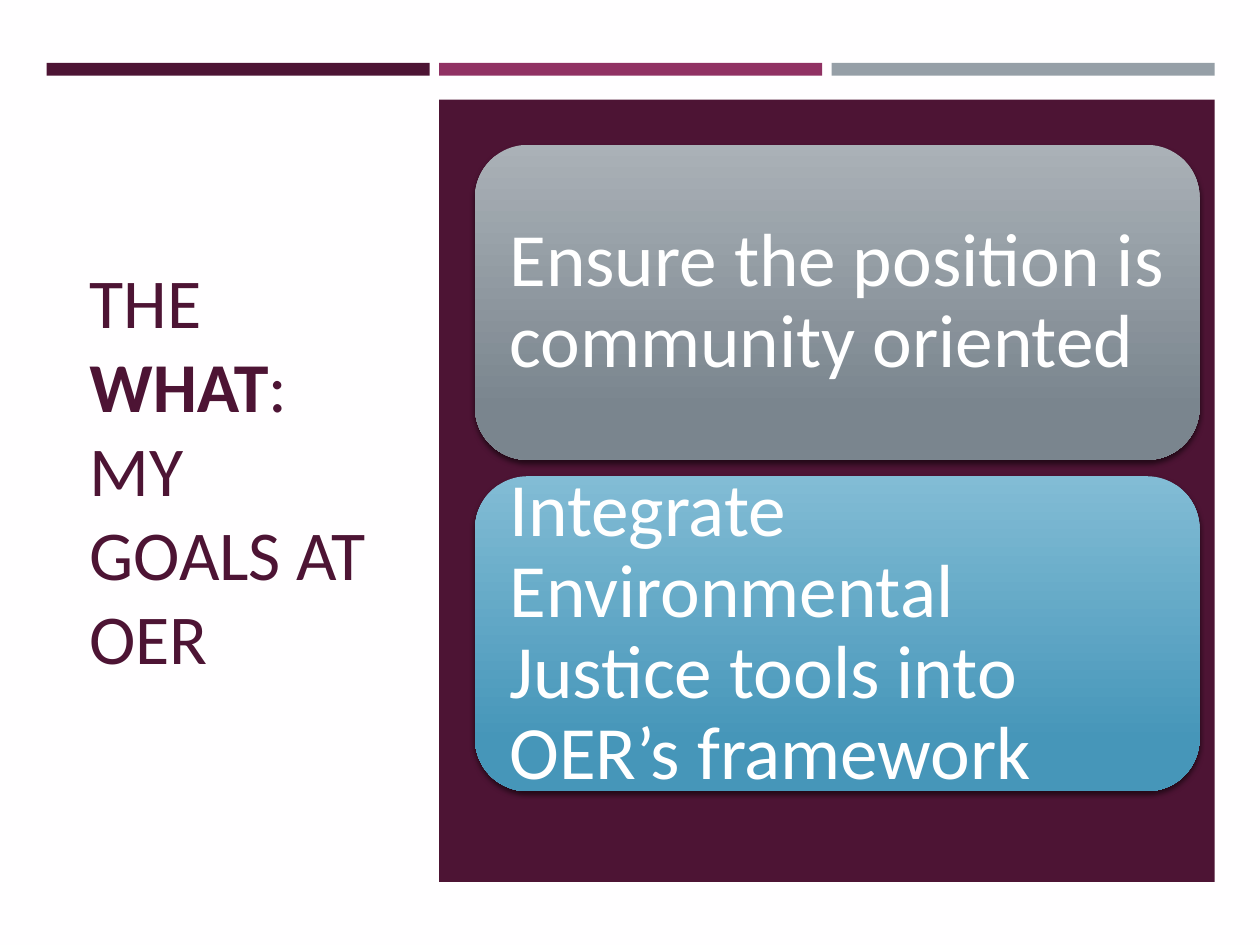
import pptx
import pptx.util
import pptx.dml.color
import pptx.enum.shapes
import pptx.enum.text
import pptx.oxml
import pptx.oxml.ns

Inch = pptx.util.Inches
Kind = pptx.enum.shapes.MSO_SHAPE
Mid = pptx.enum.text.MSO_ANCHOR.MIDDLE
Left = pptx.enum.text.PP_ALIGN.LEFT
PLUM, ROSE, GREY, WHITE = "4D1434", "903163", "969FA7", "FFFFFF"


def paint(color, code):
    """Set a python-pptx color format from a hex string."""
    color.rgb = pptx.dml.color.RGBColor.from_string(code)


def block(kind, x, y, w, h, code):
    """Add a borderless shape with a solid fill and no shadow."""
    shape = slide.shapes.add_shape(kind, Inch(x), Inch(y), Inch(w), Inch(h))
    shape.fill.solid()
    paint(shape.fill.fore_color, code)
    shape.line.fill.background()
    shape.shadow.inherit = False
    return shape


deck = pptx.Presentation()
deck.slide_width, deck.slide_height = Inch(10), Inch(7.5)
slide = deck.slides.add_slide(deck.slide_layouts[5])
back = slide.background.fill
back.solid()
paint(back.fore_color, "FFFEFF")

# Title on the left
title = slide.shapes.title
title.left, title.top = Inch(0.61), Inch(1.14)
title.width, title.height = Inch(2.5), Inch(5.15)
frame = title.text_frame
frame.word_wrap = True
frame.auto_size = pptx.enum.text.MSO_AUTO_SIZE.NONE
frame.vertical_anchor = Mid
para = frame.paragraphs[0]
para.alignment = Left
for text in ("THE ", "WHAT", ": MY GOALS AT OER"):
    run = para.add_run()
    run.text = text
    run.font.name = "Calibri"
    run.font.size = pptx.util.Pt(40)
    run.font.bold = text == "WHAT"
    paint(run.font.color, PLUM)

# Three bars across the top, and the panel under the last two
edge, step, wide = 0.37, 3.115, 3.04
for col, code in enumerate((PLUM, ROSE, GREY)):
    block(Kind.RECTANGLE, edge + col * step, 0.5, wide, 0.1, code)
block(Kind.RECTANGLE, edge + step, 0.79, step + wide, 6.21, PLUM)

# Goal cards
goals = (
    ("Ensure the position is community oriented", "AAB1B7", "7A858E"),
    ("Integrate Environmental Justice tools into OER’s framework", "82BCD5", "4696B9"),
)
shade = (
    '<a:outerShdw %s blurRad="38100" dist="25400" dir="5400000" rotWithShape="0">'
    '<a:srgbClr val="000000"><a:alpha val="55000"/></a:srgbClr></a:outerShdw>'
    % pptx.oxml.ns.nsdecls("a")
)
for row, (text, light, dark) in enumerate(goals):
    card = block(Kind.ROUNDED_RECTANGLE, 3.77, 1.15 + row * 2.63, 5.75, 2.5, dark)
    card.adjustments[0] = 0.167
    card.fill.gradient()
    card.fill.gradient_angle = 270
    for stop, spot, code in zip(card.fill.gradient_stops, (0, 0.84), (light, dark)):
        stop.position = spot
        paint(stop.color, code)
    glow = card._element.spPr.find(pptx.oxml.ns.qn("a:effectLst"))
    glow.append(pptx.oxml.parse_xml(shade))

    frame = card.text_frame
    frame.text = text
    frame.word_wrap = True
    frame.vertical_anchor = Mid
    frame.margin_left = frame.margin_right = Inch(0.15)
    frame.margin_top = frame.margin_bottom = Inch(0.15)
    para = frame.paragraphs[0]
    para.alignment = Left
    para.line_spacing = 0.9
    font = para.runs[0].font
    font.name = "Calibri"
    font.size = pptx.util.Pt(43)
    paint(font.color, WHITE)

deck.save("out.pptx")
